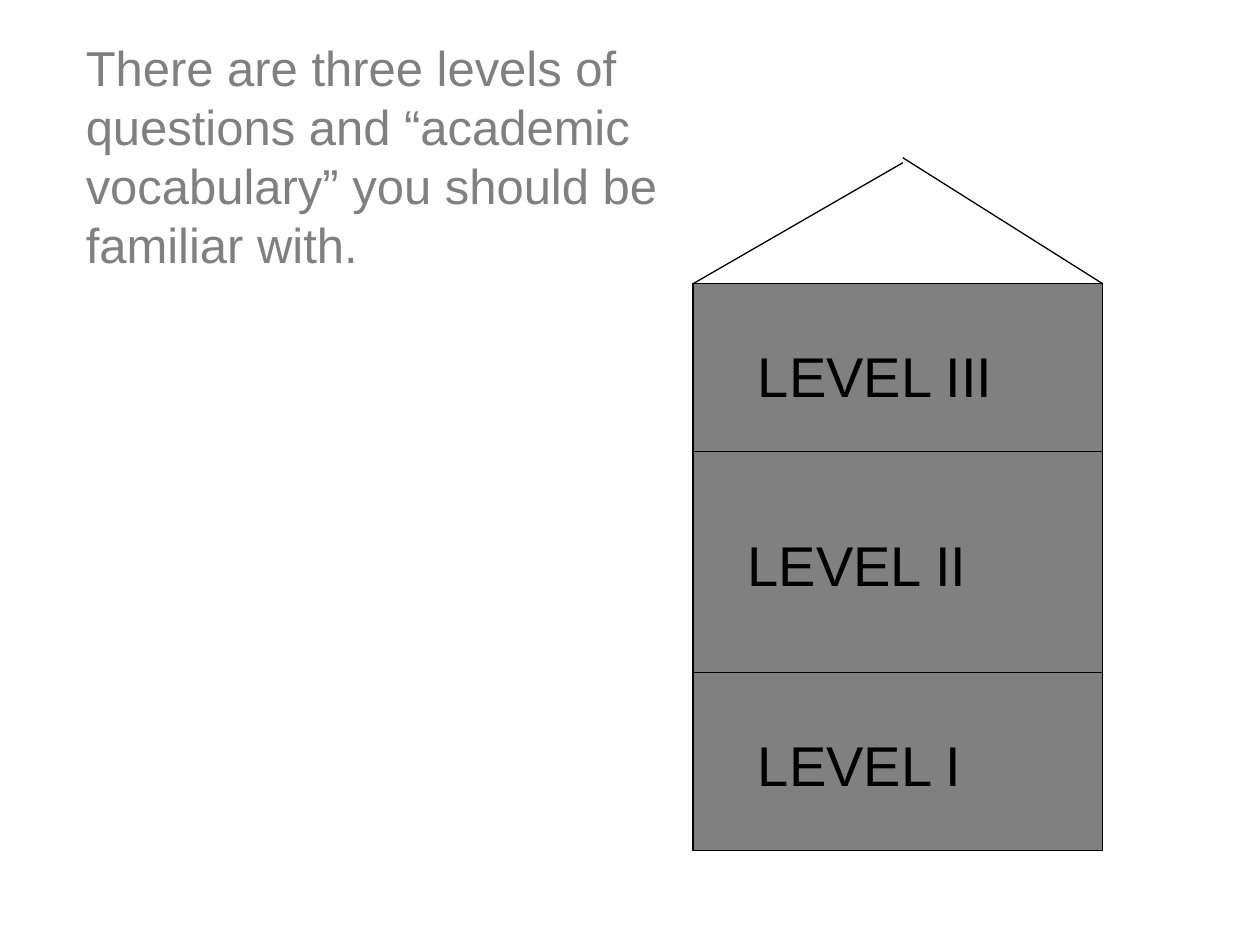
from dataclasses import dataclass

from lxml.etree import SubElement
from pptx import Presentation
from pptx.dml.color import RGBColor
from pptx.enum.shapes import MSO_CONNECTOR, MSO_SHAPE
from pptx.enum.text import MSO_AUTO_SIZE
from pptx.oxml.ns import qn
from pptx.util import Cm, Pt


@dataclass(frozen=True)
class Theme:
    font: str = "Arial"
    gray: RGBColor = RGBColor(0x80, 0x80, 0x80)
    black: RGBColor = RGBColor(0, 0, 0)
    intro_size: int = 28
    level_size: int = 32
    line_width: float = 0.75
    space_before: int = 50  # percent of a line


class HouseSlide:
    def __init__(self, slide, theme):
        self.slide = slide
        self.theme = theme

    def block(self, left, top, width, height):
        block = self.slide.shapes.add_shape(
            MSO_SHAPE.RECTANGLE, Cm(left), Cm(top), Cm(width), Cm(height))
        block.shadow.inherit = False
        block.fill.solid()
        block.fill.fore_color.rgb = self.theme.gray
        self.outline(block.line)

    def line(self, x1, y1, x2, y2):
        line = self.slide.shapes.add_connector(
            MSO_CONNECTOR.STRAIGHT, Cm(x1), Cm(y1), Cm(x2), Cm(y2))
        self.outline(line.line)
        SubElement(line._element.spPr, qn("a:effectLst"))

    def outline(self, line):
        line.color.rgb = self.theme.black
        line.width = Pt(self.theme.line_width)

    def text(self, words, left, top, width, height, size, color):
        frame = self.slide.shapes.add_textbox(
            Cm(left), Cm(top), Cm(width), Cm(height)).text_frame
        frame.word_wrap = True
        frame.auto_size = MSO_AUTO_SIZE.SHAPE_TO_FIT_TEXT
        frame.text = words
        paragraph = frame.paragraphs[0]
        # Spacing relative to the line height
        spacing = SubElement(paragraph._p.get_or_add_pPr(), qn("a:spcBef"))
        SubElement(spacing, qn("a:spcPct"),
                   val=str(self.theme.space_before * 1000))
        font = paragraph.runs[0].font
        font.name = self.theme.font
        font.size = Pt(size)
        font.color.rgb = color


def main():
    theme = Theme()
    deck = Presentation()
    deck.slide_width, deck.slide_height = Cm(25.4), Cm(19.05)
    house = HouseSlide(deck.slides.add_slide(deck.slide_layouts[6]), theme)

    # House walls and floors
    left, top, width, height = 13.97, 5.72, 8.26, 11.43
    right = left + width
    house.block(left, top, width, height)
    for floor in (13.55, 9.1):
        house.line(left, floor, right, floor)

    # Level names
    levels = (("LEVEL II", 14.82, 10.58),
              ("LEVEL III", 15.03, 6.77),
              ("LEVEL I", 15.03, 14.61))
    for name, name_left, name_top in levels:
        house.text(name, name_left, name_top, 6.35, 1.6,
                   theme.level_size, theme.black)

    # Roof
    ridge = 18.2
    house.line(left, top, ridge, 3.28)
    house.line(ridge, 3.18, right, top)

    # Introduction
    house.text("There are three levels of questions and “academic vocabulary” "
               "you should be familiar with.",
               1.48, 0.64, 14.82, 5, theme.intro_size, theme.gray)

    deck.save("out.pptx")


if __name__ == "__main__":
    main()
